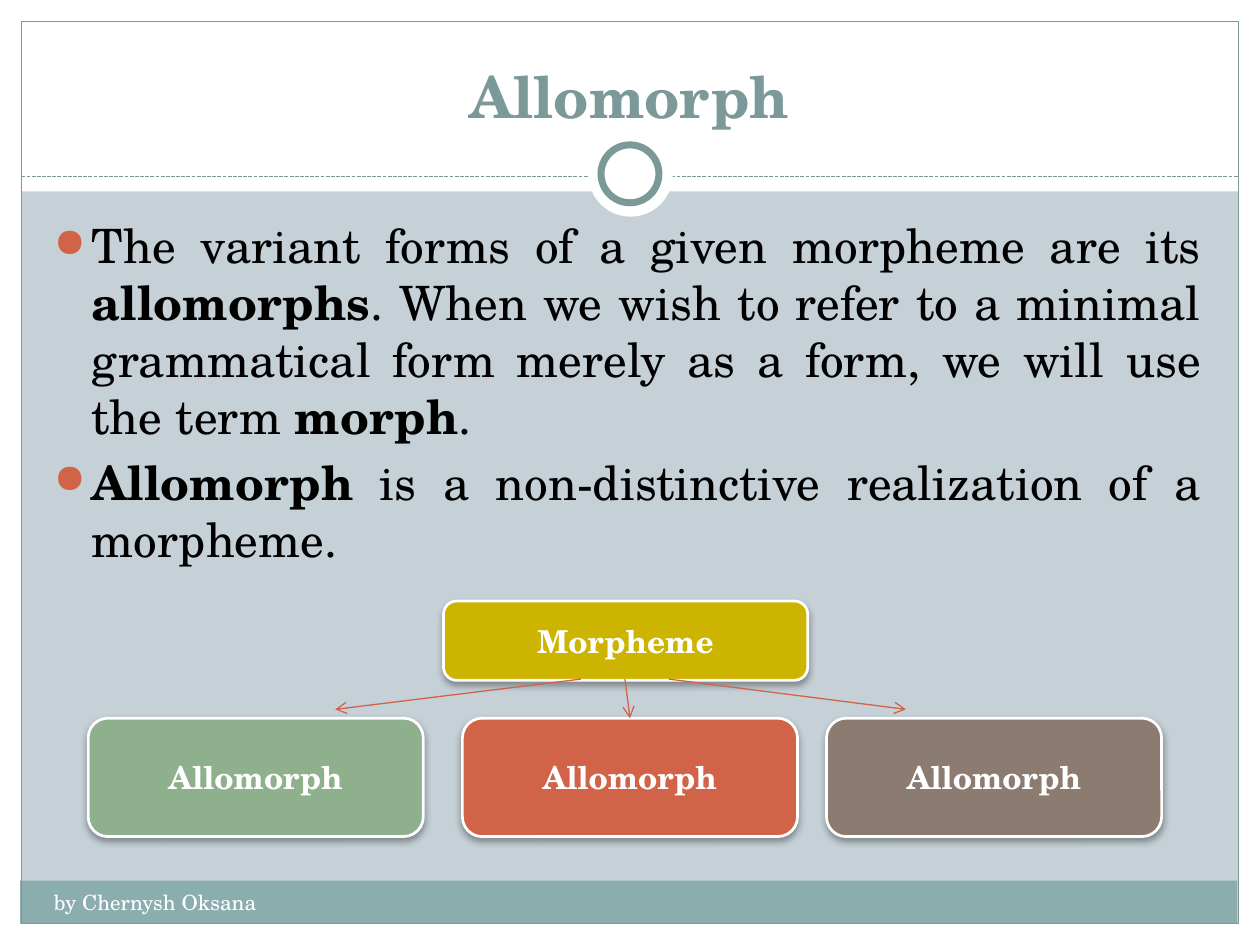
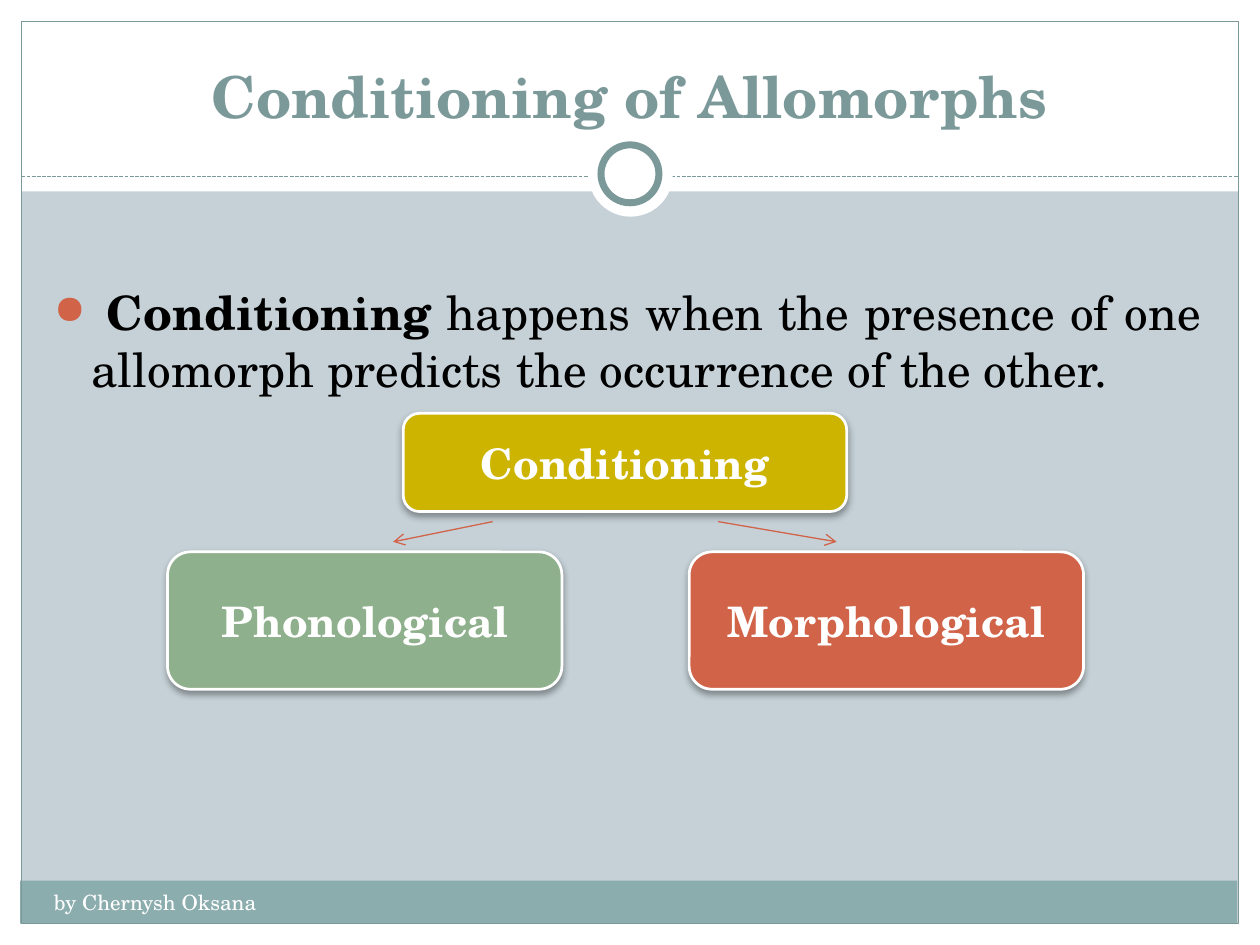
from dataclasses import dataclass

import pptx
import pptx.dml.color
import pptx.enum.dml
import pptx.enum.shapes
import pptx.enum.text
import pptx.oxml
import pptx.oxml.ns
import pptx.util

# Shared look: 100 px to the inch
SCALE = 9144
WIDTH, HEIGHT, MARGIN = 1000, 750, 17
FONT = "TeX Gyre Schola"
WHITE, BLACK = "FFFFFF", "000000"
BACKGROUND, TEAL, FOOTER_BAND = "C5D1D7", "7C999A", "8CADAE"
GOLD, GREEN, RED, BROWN = "CCB400", "8FB08C", "D16349", "8C7B70"

Shape = pptx.enum.shapes.MSO_SHAPE
Align = pptx.enum.text.PP_ALIGN
Anchor = pptx.enum.text.MSO_ANCHOR
DRAWING = pptx.oxml.ns.nsdecls("a")


@dataclass(frozen=True)
class Area:
    left: int
    top: int
    width: int
    height: int

    def emu(self) -> tuple:
        return tuple(px(n) for n in (self.left, self.top, self.width, self.height))


@dataclass(frozen=True)
class Node:
    label: str
    area: Area
    fill: str


@dataclass(frozen=True)
class Arrow:
    start: tuple[int, int]
    end: tuple[int, int]


@dataclass(frozen=True)
class Topic:
    title: str
    bullets: list[str]  # words between asterisks are bold
    body: Area
    nodes: list[Node]
    node_size: int
    arrows: list[Arrow]


def px(length: int) -> int:
    return pptx.util.Emu(length * SCALE)


def color(code: str) -> pptx.dml.color.RGBColor:
    return pptx.dml.color.RGBColor.from_string(code)


def style_span(span, size: int, code: str, bold: bool = False) -> None:
    span.font.name = FONT
    span.font.size = pptx.util.Pt(size)
    span.font.bold = bold
    span.font.color.rgb = color(code)


def set_label(frame, text: str, size: int, code: str, bold: bool, align, anchor) -> None:
    frame.word_wrap = True
    frame.vertical_anchor = anchor
    frame.text = text
    para = frame.paragraphs[0]
    para.alignment = align
    style_span(para.runs[0], size, code, bold)


def add_figure(page, kind, area: Area, fill: str = "", line: str = "", weight: float = 0.75):
    shape = page.shapes.add_shape(kind, *area.emu())
    shape.shadow.inherit = False
    if fill:
        shape.fill.solid()
        shape.fill.fore_color.rgb = color(fill)
    else:
        shape.fill.background()
    if line:
        shape.line.color.rgb = color(line)
        shape.line.width = pptx.util.Pt(weight)
    else:
        shape.line.fill.background()
    return shape


def add_line(page, start: tuple[int, int], end: tuple[int, int], code: str):
    points = [px(n) for n in (*start, *end)]
    line = page.shapes.add_connector(pptx.enum.shapes.MSO_CONNECTOR.STRAIGHT, *points)
    line.line.color.rgb = color(code)
    line.line.width = pptx.util.Pt(0.75)
    line._element.spPr.append(pptx.oxml.parse_xml(f"<a:effectLst {DRAWING}/>"))
    return line


def add_text(page, area: Area, text: str, size: int, code: str, bold: bool, align, anchor) -> None:
    box = page.shapes.add_textbox(*area.emu())
    set_label(box.text_frame, text, size, code, bold, align, anchor)


def add_arrow(page, arrow: Arrow) -> None:
    line = add_line(page, arrow.start, arrow.end, RED)
    outline = line.line._get_or_add_ln()
    outline.append(pptx.oxml.parse_xml(f'<a:tailEnd {DRAWING} type="arrow"/>'))


def add_node(page, node: Node, size: int) -> None:
    shape = add_figure(page, Shape.ROUNDED_RECTANGLE, node.area, node.fill, WHITE, 1.57)
    shadow = (
        f'<a:outerShdw {DRAWING} blurRad="50800" dist="25400" dir="5400000" rotWithShape="0">'
        f'<a:srgbClr val="{BLACK}"><a:alpha val="35000"/></a:srgbClr></a:outerShdw>'
    )
    effects = shape._element.spPr.find(pptx.oxml.ns.qn("a:effectLst"))
    effects.append(pptx.oxml.parse_xml(shadow))
    set_label(shape.text_frame, node.label, size, WHITE, True, Align.CENTER, Anchor.MIDDLE)


def add_bullets(page, area: Area, bullets: list[str], size: int = 27) -> None:
    frame = page.shapes.add_textbox(*area.emu()).text_frame
    frame.word_wrap = True
    for index, bullet in enumerate(bullets):
        para = frame.add_paragraph() if index else frame.paragraphs[0]
        para.alignment = Align.JUSTIFY
        para.space_before = pptx.util.Pt(size * 0.2)
        for part, words in enumerate(bullet.split("*")):
            if words:
                span = para.add_run()
                span.text = words
                style_span(span, size, BLACK, part % 2 == 1)
        # Bullet mark and hanging indent
        props = para._p.get_or_add_pPr()
        props.set("marL", str(px(30)))
        props.set("indent", str(-px(30)))
        for mark in (
            f'<a:buClr {DRAWING}><a:srgbClr val="{RED}"/></a:buClr>',
            f'<a:buSzPct {DRAWING} val="85000"/>',
            f'<a:buChar {DRAWING} char="●"/>',
        ):
            props.append(pptx.oxml.parse_xml(mark))


def add_theme(page) -> None:
    page.background.fill.solid()
    page.background.fill.fore_color.rgb = color(BACKGROUND)
    inner = WIDTH - 2 * MARGIN
    # White margins, header and footer band
    for area, fill in (
        (Area(0, HEIGHT - MARGIN, WIDTH, MARGIN), WHITE),
        (Area(0, 0, WIDTH, 152), WHITE),
        (Area(0, 0, MARGIN, HEIGHT), WHITE),
        (Area(WIDTH - MARGIN, 0, MARGIN, HEIGHT), WHITE),
        (Area(16, 699, inner, 34), FOOTER_BAND),
    ):
        add_figure(page, Shape.RECTANGLE, area, fill)
    add_figure(page, Shape.RECTANGLE, Area(MARGIN, MARGIN, inner, HEIGHT - 2 * MARGIN), line=TEAL)
    # Dashed divider with its ring
    divider = add_line(page, (MARGIN, 140), (WIDTH - MARGIN, 140), TEAL)
    divider.line.dash_style = pptx.enum.dml.MSO_LINE.SQUARE_DOT
    add_figure(page, Shape.OVAL, Area(467, 105, 67, 67), WHITE)
    add_figure(page, Shape.OVAL, Area(477, 115, 46, 46), WHITE, TEAL, 4)


def add_topic(deck, topic: Topic) -> None:
    page = deck.slides.add_slide(deck.slide_layouts[6])
    add_theme(page)
    add_text(page, Area(33, 25, 933, 83), topic.title, 33, TEAL, True, Align.CENTER, Anchor.BOTTOM)
    add_text(page, Area(33, 701, 392, 40), "by Chernysh Oksana", 12, WHITE, False,
             Align.LEFT, Anchor.TOP)
    add_bullets(page, topic.body, topic.bullets)
    for node in topic.nodes:
        add_node(page, node, topic.node_size)
    for arrow in topic.arrows:
        add_arrow(page, arrow)


TOPICS = [
    Topic(
        title="Allomorph",
        bullets=[
            "The variant forms of a given morpheme are its *allomorphs*. When we wish to refer "
            "to a minimal grammatical form merely as a form, we will use the term *morph*.",
            "*Allomorph* is a non-distinctive realization of a morpheme.",
        ],
        body=Area(33, 167, 930, 500),
        nodes=[Node("Morpheme", Area(352, 477, 289, 63), GOLD)] + [
            Node("Allomorph", Area(left, 570, 266, 94), fill)
            for left, fill in ((70, GREEN), (367, RED), (656, BROWN))
        ],
        node_size=18,
        arrows=[
            Arrow((461, 539), (266, 563)),
            Arrow((531, 539), (719, 563)),
            Arrow((496, 539), (500, 570)),
        ],
    ),
    Topic(
        title="Conditioning of Allomorphs",
        bullets=[
            " *Conditioning* happens when the presence of one allomorph predicts "
            "the occurrence of the other.",
        ],
        body=Area(33, 220, 930, 447),
        nodes=[Node("Conditioning", Area(320, 328, 352, 78), GOLD)] + [
            Node(label, Area(left, 438, 313, 109), fill)
            for label, left, fill in (("Phonological", 133, GREEN), ("Morphological", 547, RED))
        ],
        node_size=24,
        arrows=[Arrow((391, 414), (312, 430)), Arrow((570, 414), (664, 430))],
    ),
]


def main() -> None:
    deck = pptx.Presentation()
    deck.slide_width, deck.slide_height = px(WIDTH), px(HEIGHT)
    for topic in TOPICS:
        add_topic(deck, topic)
    deck.save("out.pptx")


if __name__ == "__main__":
    main()
